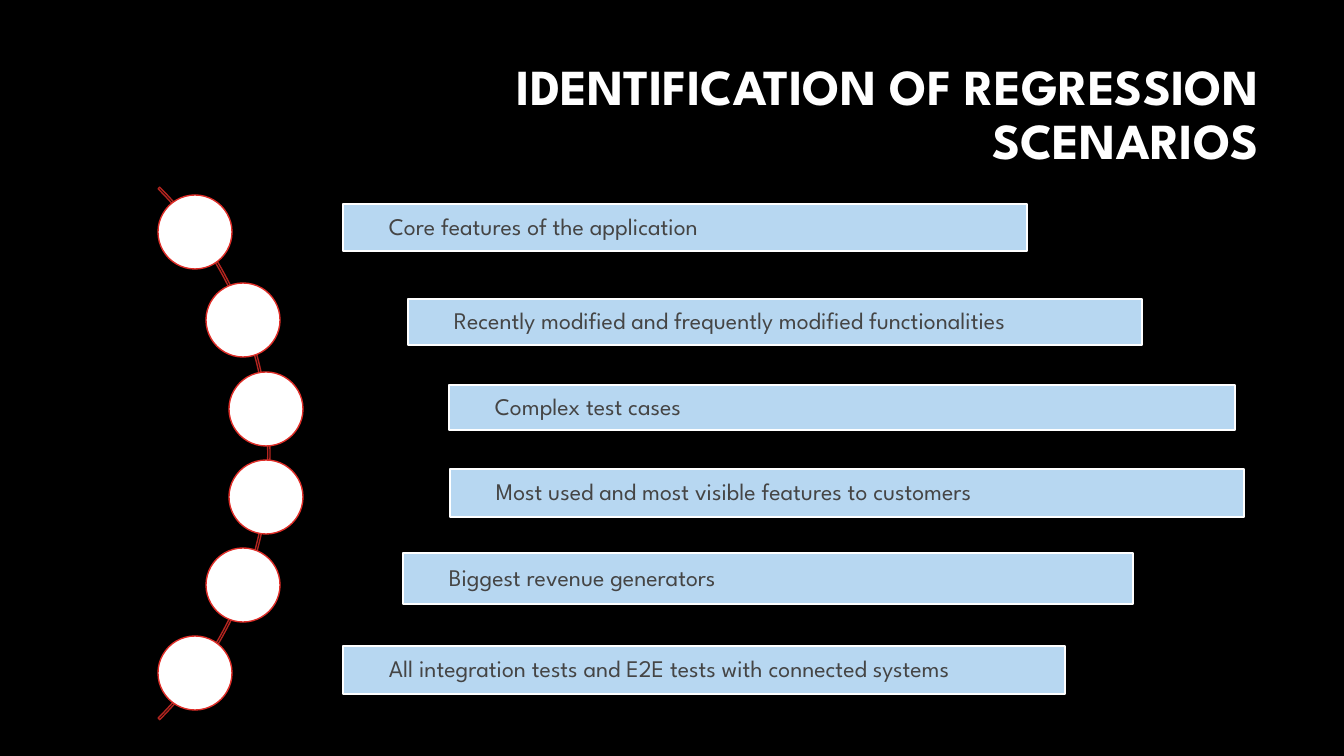
from typing import NamedTuple

from pptx import Presentation
from pptx.dml.color import RGBColor
from pptx.enum.shapes import MSO_SHAPE
from pptx.enum.text import MSO_ANCHOR, PP_ALIGN
from pptx.util import Pt

RECTANGLE, OVAL, ARC = MSO_SHAPE.RECTANGLE, MSO_SHAPE.OVAL, MSO_SHAPE.BLOCK_ARC
LEFT, RIGHT = PP_ALIGN.LEFT, PP_ALIGN.RIGHT
TOP, MIDDLE = MSO_ANCHOR.TOP, MSO_ANCHOR.MIDDLE

EMU_PER_PX = 914400 / 100.8
FONT = "League Spartan"
WHITE, BLACK, BLUE, GREY = "FFFFFF", "000000", "B7D7F1", "454545"
RED, DARK_RED = "DF2E28", "B32520"

CIRCLE_TOP, CIRCLE_PITCH, CIRCLE_SIZE = 195, 88.3, 74


class Frame(NamedTuple):
    left: int
    top: int
    width: int
    height: int


class Scenario(NamedTuple):
    text: str
    bar: Frame
    circle_left: int


SCENARIOS = [
    Scenario("Core features of the application", Frame(343, 204, 684, 47), 158),
    Scenario("Recently modified and frequently modified functionalities",
             Frame(408, 299, 734, 46), 206),
    Scenario("Complex test cases", Frame(449, 385, 786, 45), 229),
    Scenario("Most used and most visible features to customers",
             Frame(450, 469, 794, 48), 229),
    Scenario("Biggest revenue generators", Frame(403, 553, 730, 51), 206),
    Scenario("All integration tests and E2E tests with connected systems",
             Frame(343, 646, 722, 48), 158),
]


def px(length: float) -> int:
    return round(length * EMU_PER_PX)


def color(value: str) -> RGBColor:
    return RGBColor.from_string(value)


def add_outlined(page, kind, frame: Frame, line: str, fill: str = ""):
    shape = page.shapes.add_shape(kind, *map(px, frame))
    shape.shadow.inherit = False
    if fill:
        shape.fill.solid()
        shape.fill.fore_color.rgb = color(fill)
    else:
        shape.fill.background()
    shape.line.color.rgb = color(line)
    shape.line.width = Pt(1)
    return shape


def write(box, text: str, size: int, ink: str, align, anchor,
          insets: Frame, bold: bool = False) -> None:
    """Fill a box with one paragraph; insets run left, top, right, bottom."""
    frame = box.text_frame
    frame.word_wrap = True
    frame.vertical_anchor = anchor
    (frame.margin_left, frame.margin_top,
     frame.margin_right, frame.margin_bottom) = map(px, insets)
    para = frame.paragraphs[0]
    para.alignment = align
    para.line_spacing = 0.9
    span = para.add_run()
    span.text = text
    span.font.name = FONT
    span.font.size = Pt(size)
    span.font.bold = bold
    span.font.color.rgb = color(ink)


def main() -> None:
    deck = Presentation()
    deck.slide_width, deck.slide_height = px(1344), px(756)
    page = deck.slides.add_slide(deck.slide_layouts[6])
    page.background.fill.solid()
    page.background.fill.fore_color.rgb = color(BLACK)

    # Title
    title = page.shapes.add_textbox(*map(px, Frame(479, 62, 790, 164)))
    write(title, "IDENTIFICATION OF REGRESSION SCENARIOS", 36, WHITE,
          RIGHT, TOP, Frame(10, 0, 10, 5), bold=True)

    # Arc that links the circles
    arc = add_outlined(page, ARC, Frame(-483, 77, 753, 753), DARK_RED)
    for index, value in enumerate((189, 27, 0.003)):
        arc.adjustments[index] = value

    # Scenario bars with their circles
    for index, scenario in enumerate(SCENARIOS):
        bar = add_outlined(page, RECTANGLE, scenario.bar, WHITE, BLUE)
        write(bar, scenario.text, 17, GREY, LEFT, MIDDLE, Frame(46, 5, 5, 5))
        top = round(CIRCLE_TOP + index * CIRCLE_PITCH)
        circle = Frame(scenario.circle_left, top, CIRCLE_SIZE, CIRCLE_SIZE)
        add_outlined(page, OVAL, circle, RED, WHITE)

    deck.save("out.pptx")


if __name__ == "__main__":
    main()
